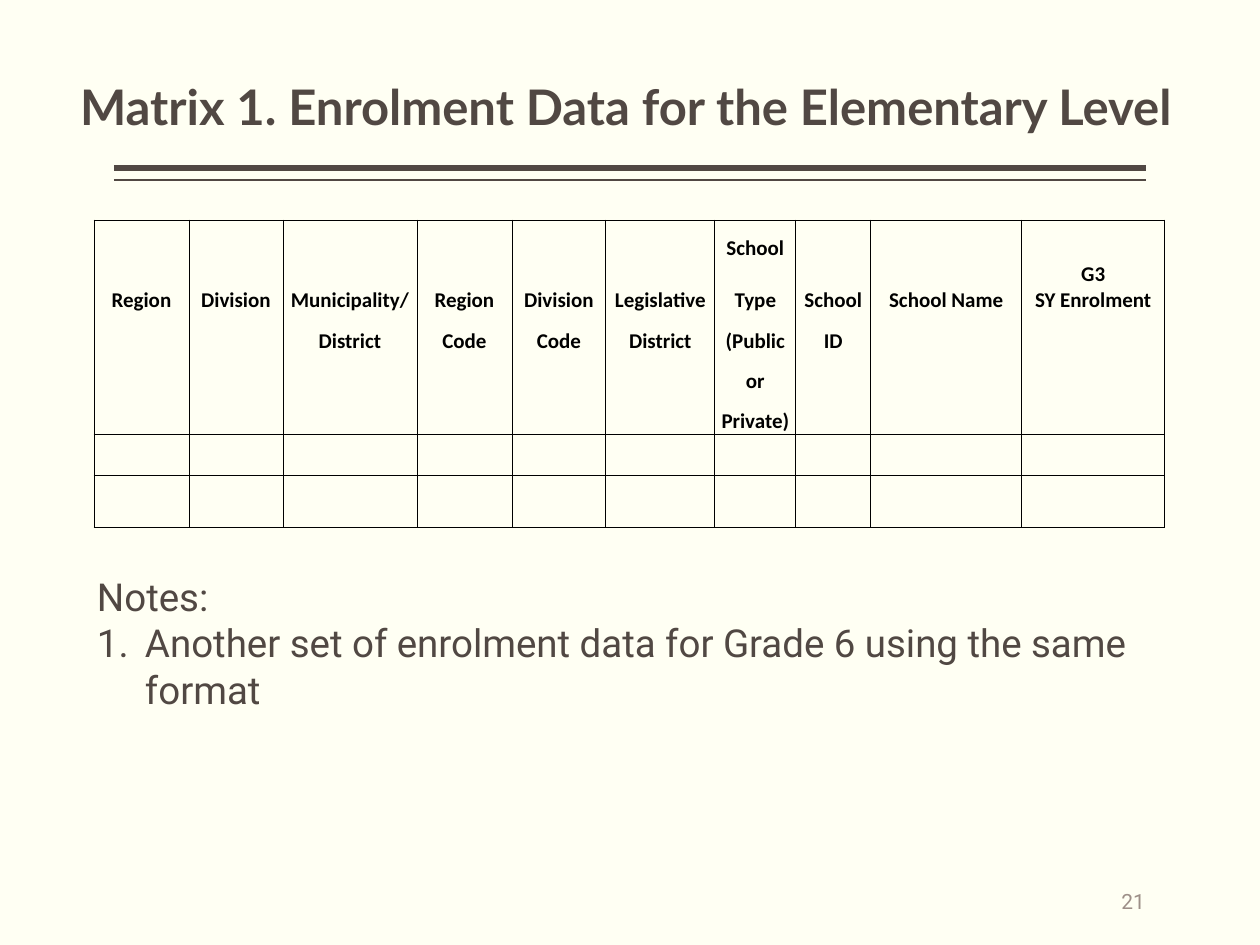
from lxml.etree import SubElement
from pptx import Presentation
from pptx.dml.color import RGBColor
from pptx.enum.shapes import MSO_CONNECTOR as Connector
from pptx.enum.text import MSO_ANCHOR as Anchor, MSO_AUTO_SIZE as AutoSize, PP_ALIGN as Align
from pptx.oxml.ns import qn
from pptx.util import Pt

SCALE = 914400 / 126
COLORS = {"background": "FFFFF3", "ink": "514843", "number": "9D8F88", "grid": "000000"}
COLUMN_WIDTHS = [95, 94, 134, 95, 94, 109, 81, 75, 151, 73, 70]
ROW_HEIGHTS = [41, 52, 41, 40, 40, 41, 52]
HEADER_ROWS = 5
MERGED_ROWS = [1, 5, 6]
HEADERS = [
    {1: "Region"},
    {1: "Division"},
    {1: "Municipality/", 2: "District"},
    {1: "Region", 2: "Code"},
    {1: "Division", 2: "Code"},
    {1: "Legislative", 2: "District"},
    {0: "School", 1: "Type", 2: "(Public", 3: "or", 4: "Private)"},
    {1: "School", 2: "ID"},
    {1: "School Name"},
    {1: "G3\nSY Enrolment"},
]


def px(value):
    return round(value * SCALE)


def color(name):
    return RGBColor.from_string(COLORS[name])


def place(shape, box):
    shape.left, shape.top, shape.width, shape.height = map(px, box)


def style(paragraph, typeface, size, color_name, bold=False, align=Align.LEFT):
    font = paragraph.font
    font.name, font.size, font.bold = typeface, Pt(size), bold
    font.color.rgb = color(color_name)
    paragraph.alignment = align


def set_frame(frame, anchor, side_margin):
    frame.word_wrap = True
    frame.auto_size = AutoSize.NONE
    frame.vertical_anchor = anchor
    frame.margin_left = frame.margin_right = px(side_margin)


def add_title(slide, box):
    title = slide.shapes.title
    place(title, box)
    title.text = "Matrix 1. Enrolment Data for the Elementary Level"
    set_frame(title.text_frame, Anchor.BOTTOM, 0)
    paragraph = title.text_frame.paragraphs[0]
    paragraph.line_spacing = 0.9
    style(paragraph, "Lato", 28, "ink", bold=True)


def add_double_rule(slide, box):
    left, top, width, height = box
    for y, weight in ((top, 3), (top + height, 1)):
        rule = slide.shapes.add_connector(
            Connector.STRAIGHT, px(left), px(y), px(left + width), px(y))
        rule.line.color.rgb = color("ink")
        rule.line.width = Pt(weight)
        SubElement(rule._element.spPr, qn("a:effectLst"))


def set_borders(cell, visible_sides):
    properties = cell._tc.get_or_add_tcPr()
    for side in "LRTB":
        line = SubElement(properties, qn(f"a:ln{side}"), w=str(Pt(0.5)))
        if side in visible_sides:
            fill = SubElement(line, qn("a:solidFill"))
            SubElement(fill, qn("a:srgbClr"), val=COLORS["grid"])
        else:
            SubElement(line, qn("a:noFill"))
    cell.fill.background()


def visible_sides(row, column):
    sides = "LR"
    if row not in MERGED_ROWS:
        sides = {9: "L", 10: "R"}.get(column, sides)
    if row == 0 or row >= HEADER_ROWS:
        sides += "T"
    if row >= HEADER_ROWS - 1:
        sides += "B"
    return sides


def add_matrix(slide, box):
    frame = slide.shapes.add_table(len(ROW_HEIGHTS), len(COLUMN_WIDTHS), *map(px, box))
    table = frame.table
    table.first_row = table.horz_banding = False
    for column, width in zip(table.columns, COLUMN_WIDTHS):
        column.width = px(width)
    for row, height in zip(table.rows, ROW_HEIGHTS):
        row.height = px(height)
    for row in MERGED_ROWS:
        table.cell(row, 9).merge(table.cell(row, 10))
    for row in range(len(ROW_HEIGHTS)):
        for column in range(len(COLUMN_WIDTHS)):
            cell = table.cell(row, column)
            cell.margin_left = cell.margin_right = cell.margin_top = px(1)
            cell.margin_bottom = 0
            cell.vertical_anchor = Anchor.BOTTOM
            set_borders(cell, visible_sides(row, column))
    for column, labels in enumerate(HEADERS):
        for row, label in labels.items():
            cell = table.cell(row, column)
            cell.text = label
            for paragraph in cell.text_frame.paragraphs:
                style(paragraph, "Calibri", 12, "grid", bold=True, align=Align.CENTER)


def add_notes_list(slide, box):
    body = slide.placeholders[1]
    place(body, box)
    frame = body.text_frame
    frame.text = "Notes:\nAnother set of enrolment data for Grade 6 using the same format"
    set_frame(frame, Anchor.TOP, 13)
    for paragraph, indent in zip(frame.paragraphs, (0, 48)):
        paragraph.space_before = Pt(0)
        properties = paragraph._p.get_or_add_pPr()
        properties.set("marL", str(px(indent)))
        properties.set("indent", str(-px(indent)))
        if indent:
            SubElement(properties, qn("a:buFont"), typeface="+mj-lt")
            SubElement(properties, qn("a:buAutoNum"), type="arabicPeriod")
        else:
            SubElement(properties, qn("a:buNone"))
        style(paragraph, "Roboto", 22, "ink")


def add_slide_number(slide, box):
    number = slide.shapes.add_textbox(*map(px, box))
    frame = number.text_frame
    frame.text = "21"
    set_frame(frame, Anchor.MIDDLE, 0)
    style(frame.paragraphs[0], "Roboto", 12, "number", align=Align.RIGHT)


def main():
    presentation = Presentation()
    presentation.slide_width, presentation.slide_height = px(1260), px(945)
    slide = presentation.slides.add_slide(presentation.slide_layouts[1])
    slide.background.fill.solid()
    slide.background.fill.fore_color.rgb = color("background")
    add_double_rule(slide, (114, 168, 1032, 12))
    add_title(slide, (80, 63, 1102, 79))
    add_slide_number(slide, (956, 876, 189, 50))
    add_matrix(slide, (94, 220, sum(COLUMN_WIDTHS), sum(ROW_HEIGHTS)))
    add_notes_list(slide, (84, 567, 1102, 152))
    presentation.save("out.pptx")


if __name__ == "__main__":
    main()
